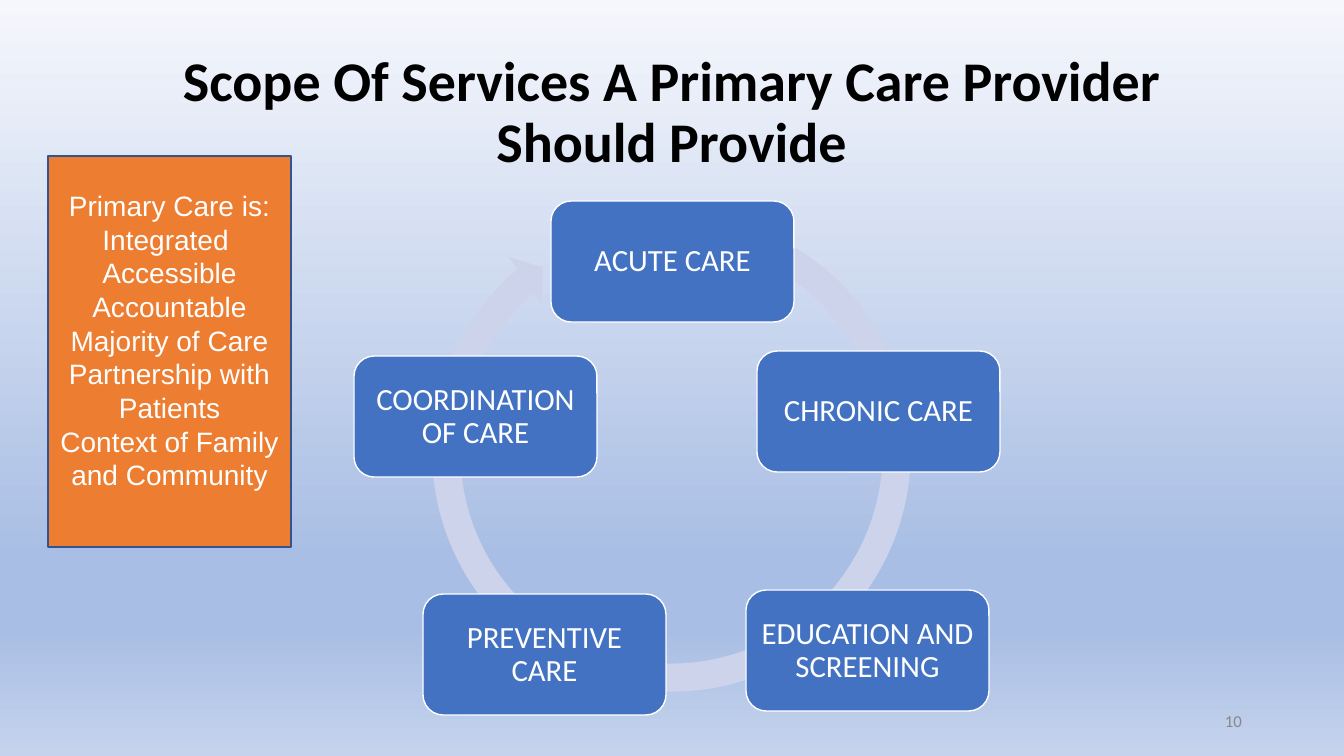
"""Build the slide on the scope of services of a primary care provider."""
import copy

from pptx import Presentation
from pptx import util as u
from pptx.dml.color import RGBColor
from pptx.enum import shapes, text
from pptx.oxml.ns import qn

PX = 914400 / 100.8
BLACK = RGBColor(0x00, 0x00, 0x00)
WHITE = RGBColor(0xFF, 0xFF, 0xFF)
GREY = RGBColor(0x88, 0x88, 0x88)
BLUE = RGBColor(0x43, 0x72, 0xC3)
NAVY = RGBColor(0x32, 0x54, 0x91)
ORANGE = RGBColor(0xED, 0x7D, 0x31)
LILAC = RGBColor(0xCC, 0xD3, 0xEA)
PALE = RGBColor(0xF5, 0xF7, 0xFC)
SKY = RGBColor(0xA9, 0xBE, 0xE4)
MIST = RGBColor(0xC5, 0xD3, 0xED)


def px(*vals):
    """Turn whole pixels into EMU."""
    return [u.Emu(round(v * PX)) for v in vals]


def write(shape, *lines, size, color, font="Calibri", bold=False,
          align=text.PP_ALIGN.CENTER, space=1.0, pad=(10, 5, 10, 5)):
    """Fill a shape with one paragraph per line in the given format."""
    frame = shape.text_frame
    frame.word_wrap = True
    frame.auto_size = text.MSO_AUTO_SIZE.NONE
    frame.vertical_anchor = text.MSO_ANCHOR.MIDDLE
    (frame.margin_left, frame.margin_top,
     frame.margin_right, frame.margin_bottom) = px(*pad)
    for i, line in enumerate(lines):
        para = frame.paragraphs[0] if i == 0 else frame.add_paragraph()
        para.alignment = align
        para.line_spacing = space
        run = para.add_run()
        run.text = line
        run.font.name = font
        run.font.size = u.Pt(size)
        run.font.bold = bold
        run.font.color.rgb = color


deck = Presentation()
deck.slide_width, deck.slide_height = px(1344, 756)
slide = deck.slides.add_slide(deck.slide_layouts[5])

fill = slide.background.fill
fill.gradient()
fill.gradient_angle = 270
stops = slide.element.find(".//" + qn("a:gsLst"))
shades = [(0, PALE), (0.74, SKY), (0.83, SKY), (1, MIST)]
while len(stops) < len(shades):
    stops.append(copy.deepcopy(stops[0]))
for stop, (place, color) in zip(fill.gradient_stops, shades):
    stop.position = place
    stop.color.rgb = color

title = slide.shapes.title
title.left, title.top, title.width, title.height = px(92, 41, 1159, 146)
write(title, "Scope Of Services A Primary Care Provider Should Provide",
      size=40, color=BLACK, bold=True, space=0.9)

RECT, ROUND = shapes.MSO_SHAPE.RECTANGLE, shapes.MSO_SHAPE.ROUNDED_RECTANGLE
ring = slide.shapes.add_shape(
    shapes.MSO_SHAPE.CIRCULAR_ARROW, *px(417, 198, 509, 509))
for i, size in enumerate([5544, 330680, 13777539, 17383896, 5757]):
    ring.adjustments[i] = size / 100000
ring.shadow.inherit = False
ring.fill.solid()
ring.fill.fore_color.rgb = LILAC
ring.line.fill.background()

care = dict(size=22, color=WHITE, space=0.9, pad=(9, 10, 9, 9))
note = dict(size=20, color=WHITE, font="Arial", pad=(10, 5, 10, 28))
boxes = [
    (551, 201, ["ACUTE CARE"]),
    (757, 351, ["CHRONIC CARE"]),
    (354, 356, ["COORDINATION OF CARE"]),
    (423, 594, ["PREVENTIVE CARE"]),
    (746, 590, ["EDUCATION AND SCREENING"]),
    (48, 156, ["Primary Care is:", "Integrated ", "Accessible",
               "Accountable", "Majority of Care",
               "Partnership with Patients",
               "Context of Family and Community"]),
]
for left, top, lines in boxes:
    is_note = len(lines) > 1
    box = slide.shapes.add_shape(
        RECT if is_note else ROUND,
        *px(left, top, 243, 391 if is_note else 121))
    box.shadow.inherit = False
    box.fill.solid()
    box.fill.fore_color.rgb = ORANGE if is_note else BLUE
    box.line.color.rgb = NAVY if is_note else WHITE
    box.line.width = u.Pt(2 if is_note else 1)
    write(box, *lines, **(note if is_note else care))

number = slide.shapes.add_textbox(*px(950, 701, 302, 40))
write(number, "10", size=12, color=GREY, align=text.PP_ALIGN.RIGHT)

deck.save("out.pptx")
